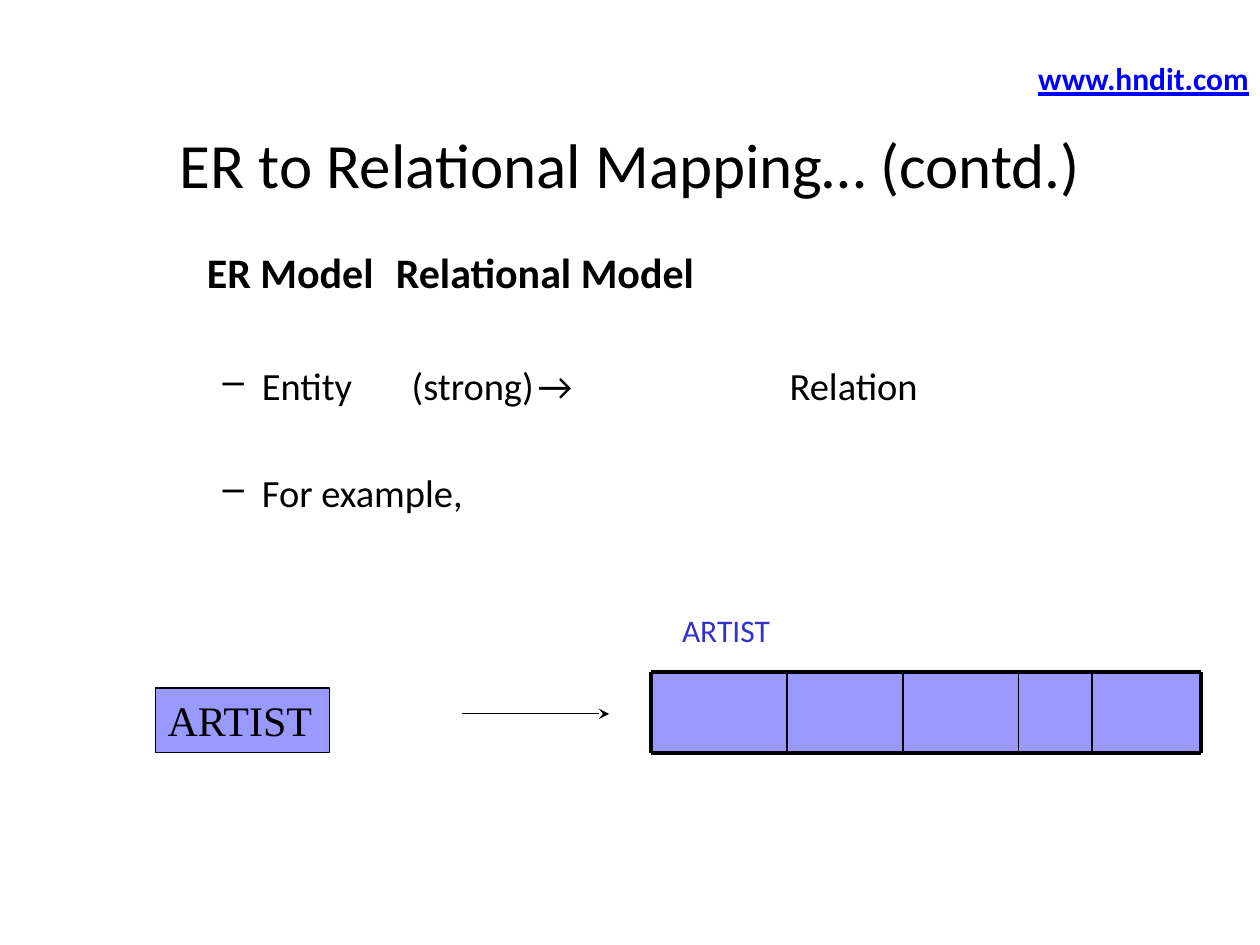
from dataclasses import dataclass
from itertools import accumulate

from lxml.etree import SubElement
from pptx import Presentation
from pptx.dml.color import RGBColor
from pptx.enum.shapes import MSO_CONNECTOR, MSO_SHAPE
from pptx.enum.text import MSO_ANCHOR, PP_ALIGN
from pptx.oxml.ns import qn
from pptx.util import Cm, Pt


@dataclass(frozen=True)
class Theme:
    ink: RGBColor = RGBColor(0, 0, 0)
    fill: RGBColor = RGBColor(0x99, 0x99, 0xFF)
    label: RGBColor = RGBColor(0x33, 0x33, 0xCC)
    address: RGBColor = RGBColor(0, 0, 0xFF)
    sans: str = "Calibri"
    serif: str = "Times New Roman"
    title_size: int = 36
    heading_size: int = 24
    body_size: int = 22
    small_size: int = 18
    thin: float = 0.75
    divider: float = 1
    border: float = 2.25


@dataclass(frozen=True)
class Area:
    left: float
    top: float
    width: float
    height: float

    def lengths(self) -> tuple:
        return Cm(self.left), Cm(self.top), Cm(self.width), Cm(self.height)


@dataclass(frozen=True)
class BodyLine:
    text: str
    size: int
    margin: float
    tabs: tuple = ()
    hanging: float = 0
    bullet: str = ""
    bold: bool = False
    space_before: float = 0


THEME = Theme()
BODY_LINES = (
    BodyLine("ER Model\tRelational Model", THEME.heading_size, 0.95, (11.11,), bold=True),
    BodyLine("Entity\t(strong)\t→\tRelation", THEME.body_size, 2.06, (5.08, 7.62, 12.7),
             0.79, "–", space_before=37),
    BodyLine("For example,", THEME.body_size, 2.06, (), 0.79, "–", space_before=35),
)
RELATION = Area(13.12, 13.55, 11.09, 1.63)
COLUMN_WIDTHS = (2.75, 2.33, 2.33, 1.48, 2.2)


def style(para, size: int, color: RGBColor = THEME.ink, name: str = THEME.sans,
          bold: bool = False, underline: bool = False) -> None:
    font = para.font
    font.size, font.name, font.bold, font.underline = Pt(size), name, bold, underline
    font.color.rgb = color


def add_text(page, area: Area, text: str, size: int, color: RGBColor = THEME.ink,
             align=PP_ALIGN.LEFT, anchor=MSO_ANCHOR.TOP, wrap: bool = True, **options):
    box = page.shapes.add_textbox(*area.lengths())
    frame = box.text_frame
    frame.word_wrap, frame.vertical_anchor = wrap, anchor
    para = frame.paragraphs[0]
    para.text, para.alignment = text, align
    style(para, size, color, **options)


def add_body(page, area: Area, lines: tuple) -> None:
    frame = page.shapes.add_textbox(*area.lengths()).text_frame
    frame.word_wrap = True
    for index, line in enumerate(lines):
        para = frame.add_paragraph() if index else frame.paragraphs[0]
        para.text = line.text
        properties = para._p.get_or_add_pPr()
        properties.set("marL", str(Cm(line.margin)))
        properties.set("indent", str(-Cm(line.hanging)))
        if line.bullet:
            SubElement(properties, qn("a:buChar"), char=line.bullet)
        if line.tabs:
            stops = SubElement(properties, qn("a:tabLst"))
            for position in line.tabs:
                SubElement(stops, qn("a:tab"), pos=str(Cm(position)), algn="l")
        style(para, line.size, bold=line.bold)
        if line.space_before:
            para.space_before = Pt(line.space_before)


def add_rectangle(page, area: Area):
    box = page.shapes.add_shape(MSO_SHAPE.RECTANGLE, *area.lengths())
    box.shadow.inherit = False
    box.fill.solid()
    box.fill.fore_color.rgb = THEME.fill
    box.line.fill.background()
    return box


def add_line(page, start: tuple, end: tuple, width: float, arrow: bool = False) -> None:
    points = [Cm(value) for value in (*start, *end)]
    line = page.shapes.add_connector(MSO_CONNECTOR.STRAIGHT, *points)
    line.line.color.rgb = THEME.ink
    line.line.width = Pt(width)
    if arrow:
        SubElement(line.line._get_or_add_ln(), qn("a:tailEnd"), type="stealth")
    SubElement(line._element.spPr, qn("a:effectLst"))


def add_entity(page, area: Area, name: str) -> None:
    box = add_rectangle(page, area)
    box.line.color.rgb = THEME.ink
    box.line.width = Pt(THEME.thin)
    frame = box.text_frame
    frame.word_wrap, frame.vertical_anchor = False, MSO_ANCHOR.TOP
    para = frame.paragraphs[0]
    para.text, para.alignment = name, PP_ALIGN.LEFT
    style(para, THEME.heading_size, name=THEME.serif)


def add_relation(page, area: Area, widths: tuple) -> None:
    edges = list(accumulate(widths, initial=area.left))
    right, bottom = edges[-1], area.top + area.height
    for left, width in zip(edges, widths):
        add_rectangle(page, Area(left, area.top, width, area.height))
    for level in (area.top, bottom):
        add_line(page, (area.left, level), (right, level), THEME.border)
    for edge in edges:
        weight = THEME.border if edge in (area.left, right) else THEME.divider
        add_line(page, (edge, area.top), (edge, bottom), weight)


def main() -> None:
    deck = Presentation()
    deck.slide_width, deck.slide_height = Cm(25.4), Cm(19.05)
    page = deck.slides.add_slide(deck.slide_layouts[6])
    add_text(page, Area(1.27, 1.7, 22.86, 3.18), "ER to Relational Mapping… (contd.)",
             THEME.title_size, align=PP_ALIGN.CENTER, anchor=MSO_ANCHOR.MIDDLE)
    add_body(page, Area(2.97, 4.85, 21.8, 13.15), BODY_LINES)
    add_entity(page, Area(3.13, 13.87, 3.51, 1.3), "ARTIST")
    add_line(page, (9.31, 14.39), (12.28, 14.39), THEME.thin, arrow=True)
    add_relation(page, RELATION, COLUMN_WIDTHS)
    add_text(page, Area(13.5, 12.2, 2.8, 1.03), "ARTIST", THEME.small_size, THEME.label)
    add_text(page, Area(20.68, 1.07, 4.78, 1.03), "www.hndit.com", THEME.small_size,
             THEME.address, wrap=False, bold=True, underline=True)
    deck.save("out.pptx")


if __name__ == "__main__":
    main()
